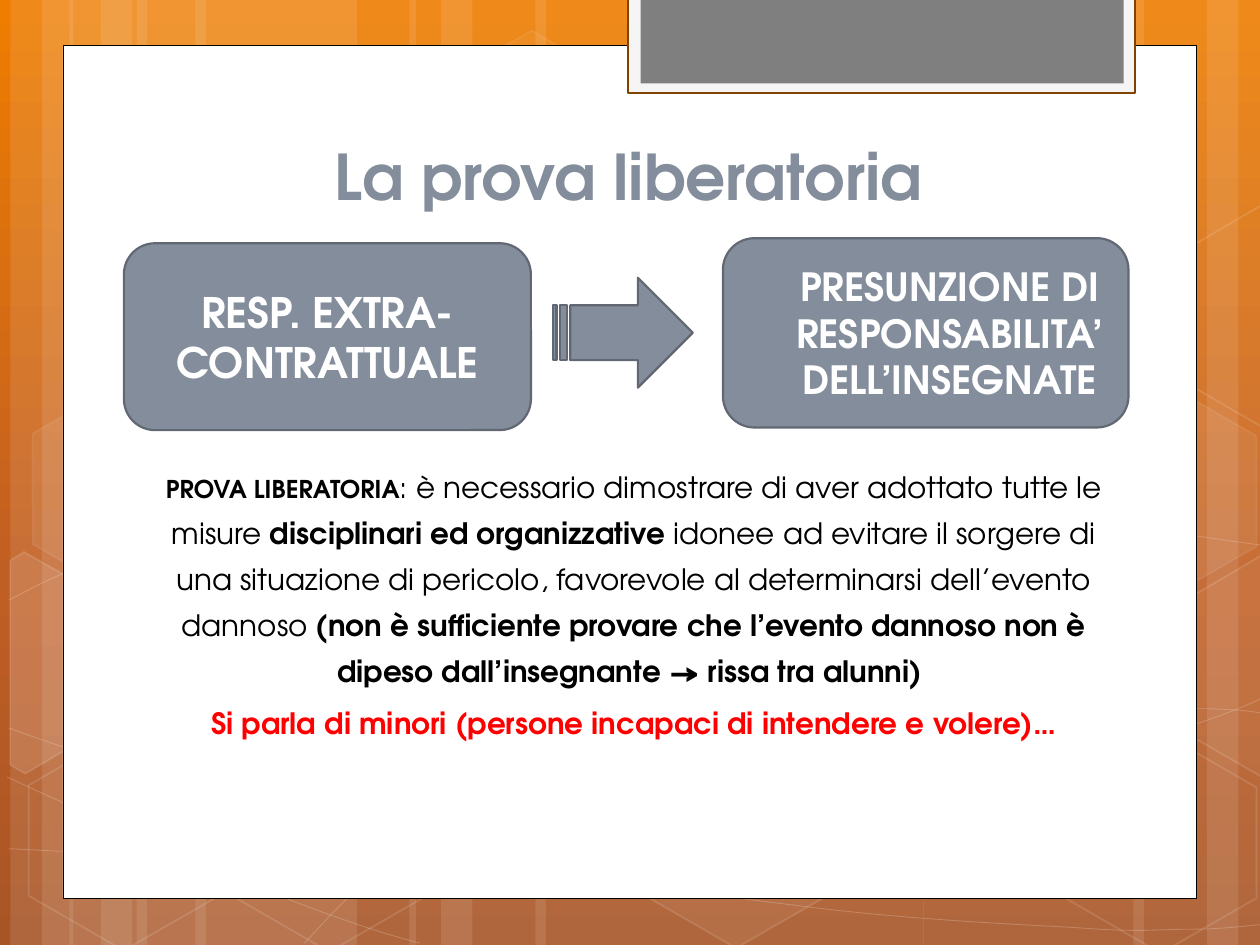
from copy import deepcopy

from lxml.etree import SubElement
from pptx import Presentation
from pptx.dml.color import RGBColor
from pptx.enum.shapes import MSO_SHAPE
from pptx.enum.text import MSO_ANCHOR, PP_ALIGN
from pptx.oxml.ns import qn
from pptx.util import Pt

WHITE = RGBColor(0xFF, 0xFF, 0xFF)
BLACK = RGBColor(0, 0, 0)
RED = RGBColor(0xFF, 0, 0)
SLATE = RGBColor(0x83, 0x8D, 0x9B)
SLATE_EDGE = RGBColor(0x61, 0x68, 0x73)
TAB_FRAME = RGBColor(0xF5, 0xF5, 0xF5)
TAB_EDGE = RGBColor(0x80, 0x43, 0)
TAB_GREY = RGBColor(0x7F, 0x7F, 0x7F)
BACKGROUND_STOPS = [
    (0, RGBColor(0xEE, 0x7D, 0)),
    (0.62, RGBColor(0xC0, 0x5E, 0x23)),
    (1, RGBColor(0xA8, 0x55, 0x26)),
]
FONT = "TeX Gyre Adventor"
SLIDE_BOX = (0, 0, 720, 540)

STRIPE_GROUPS = [(6, 1, 126), (39.6, 1, 126), (725.6, -1, 126), (234, 1, 222)]
CURVES = [
    ("CCCC", [
        (5, 485), (44, 487), (83, 489), (137, 488), (191, 487), (258, 486), (330, 479),
        (402, 472), (504, 458), (570, 444), (636, 431), (703, 409), (725, 397)]),
    ("CCCC", [
        (5, 343), (26, 332), (47, 321), (87, 310), (128, 300), (186, 284), (250, 279),
        (314, 273), (392, 273), (471, 279), (550, 284), (682, 307), (725, 312)]),
    ("C", [(4, 444), (91, 484), (178, 523), (240, 539)]),
    ("CCCCCC", [
        (5, 416), (27, 424), (50, 432), (92, 444), (134, 454), (197, 472), (257, 485),
        (317, 497), (392, 510), (452, 517), (512, 525), (576, 528), (614, 530),
        (652, 533), (662, 531), (680, 531), (699, 531), (712, 529), (725, 528)]),
    ("CCCCCCCLCC", [
        (174, 539), (187, 525), (200, 510), (217, 498), (235, 485), (259, 470), (279, 460),
        (300, 450), (312, 446), (338, 438), (364, 431), (413, 421), (438, 416),
        (464, 411), (467, 411), (490, 410), (512, 408), (547, 405), (572, 405),
        (597, 404), (638, 405), (638, 405), (686, 405),
        (699, 405), (711, 406), (718, 407), (724, 408), (722, 407), (724, 408)]),
]
HEXAGONS = [
    (240.5, 25.9, 4, 8), (357.8, 424.1, 6, 12), (7.9, 425.5, None, 12),
    (10.1, 224.6, 7, 8), (125.3, 426.2, None, 12),
    (600.5, 427, None, 12), (600.5, 226.1, 7, 8),
]
CUT_HEXAGONS = [
    ([(5.8, 320.4), (13.7, 315.4), (69.1, 347), (68.4, 410.4), (14.4, 442.1), (5.8, 437)], 10),
    ([(666.7, 349.2), (720.7, 317.5), (726.5, 321.1), (726.5, 441.4), (721.4, 444.2),
      (666.7, 412.6)], 4),
    ([(666.7, 149), (720.7, 117.4), (727.2, 121), (726.5, 241.2), (721.4, 244.1),
      (666.7, 212.4)], None),
]


def set_values(target, values):
    for name, value in values.items():
        setattr(target, name, value)


def set_alpha(fill_parent, percent):
    color = fill_parent.find(qn("a:solidFill"))[0]
    SubElement(color, qn("a:alpha")).set("val", str(percent * 1000))


def paint(shape, fill=None, line=None, width=1, fill_alpha=None, line_alpha=None):
    shape.shadow.inherit = False
    for target, color in ((shape.fill, fill), (shape.line.fill, line)):
        if color is None:
            target.background()
        else:
            target.solid()
            target.fore_color.rgb = color
    if line is not None:
        shape.line.width = Pt(width)
    properties = shape._element.spPr
    if fill_alpha:
        set_alpha(properties, fill_alpha)
    if line_alpha:
        set_alpha(properties.find(qn("a:ln")), line_alpha)


def add_preset(slide, kind, box, **style):
    shape = slide.shapes.add_shape(kind, *map(Pt, box))
    paint(shape, **style)
    return shape


def add_outline(slide, box, points, close, **style):
    placed = [(Pt(box[0] + x), Pt(box[1] + y)) for x, y in points]
    builder = slide.shapes.build_freeform(*placed[0])
    builder.add_line_segments(placed[1:], close=close)
    shape = builder.convert_to_shape()
    paint(shape, **style)
    return shape


def bend(shape, commands):
    steps = iter(list(shape._element.iter(qn("a:lnTo"))))
    for command in commands:
        step = next(steps)
        if command == "C":
            step.tag = qn("a:cubicBezTo")
            for extra in (next(steps), next(steps)):
                step.append(extra[0])
                extra.getparent().remove(extra)


def write_paragraph(paragraph, runs, **values):
    set_values(paragraph, {"alignment": PP_ALIGN.CENTER, **values})
    for text, size, bold, color in runs:
        run = paragraph.add_run()
        run.text = text
        set_values(run.font, {"name": FONT, "size": Pt(size), "bold": bold})
        run.font.color.rgb = color


def add_background(slide):
    fill = slide.background.fill
    fill.gradient()
    fill.gradient_angle = 270
    first = next(slide.element.iter(qn("a:gs")))
    first.addnext(deepcopy(first))
    for stop, (position, color) in zip(fill.gradient_stops, BACKGROUND_STOPS):
        stop.position = position
        stop.color.rgb = color


def add_decoration(slide, box):
    left, top, _, height = box
    for origin, direction, broad in STRIPE_GROUPS:
        for offset, width in ((72, broad), (0, 36), (18, 60)):
            x = origin + offset if direction > 0 else origin - offset - width
            add_preset(slide, MSO_SHAPE.RECTANGLE, (left + x, top, width, height),
                       fill=WHITE, fill_alpha=10)
    for commands, nodes in CURVES:
        curve = add_outline(slide, box, nodes, False, line=WHITE, width=0.5, line_alpha=20)
        bend(curve, commands)
    for x, y, fill_alpha, line_alpha in HEXAGONS:
        hexagon = add_preset(slide, MSO_SHAPE.HEXAGON, (left + x, top + y, 126, 109.4),
                             fill=WHITE if fill_alpha else None, line=WHITE,
                             fill_alpha=fill_alpha, line_alpha=line_alpha)
        hexagon.adjustments[0] = 0.29
        hexagon.rotation = 30
    for points, fill_alpha in CUT_HEXAGONS:
        add_outline(slide, box, points, True, fill=WHITE if fill_alpha else None,
                    line=WHITE, fill_alpha=fill_alpha, line_alpha=12)


def add_panel(slide, box):
    left, top, _, _ = box
    add_preset(slide, MSO_SHAPE.RECTANGLE, box, fill=WHITE, line=BLACK, width=0.5)
    add_preset(slide, MSO_SHAPE.RECTANGLE, (left + 323, top - 27.4, 289.6, 54.7),
               fill=TAB_FRAME, line=TAB_EDGE, width=1.25)
    add_preset(slide, MSO_SHAPE.RECTANGLE, (left + 330.1, top - 27.4, 276, 49),
               fill=TAB_GREY)


def add_text(slide, box, paragraphs, anchor=MSO_ANCHOR.TOP, **values):
    frame = slide.shapes.add_textbox(*map(Pt, box)).text_frame
    set_values(frame, {"word_wrap": True, "vertical_anchor": anchor})
    for index, runs in enumerate(paragraphs):
        paragraph = frame.add_paragraph() if index else frame.paragraphs[0]
        write_paragraph(paragraph, runs, **values)


def add_flow(slide, box):
    left, top, _, _ = box
    style = {"fill": SLATE, "line": SLATE_EDGE, "width": 1.25}
    cards = [
        ((342.3, 0, 231.8, 108.2), "PRESUNZIONE DI RESPONSABILITA’ DELL’INSEGNATE", 22.2, 27.4),
        ((0, 2.9, 232.6, 106.8), "RESP. EXTRA-CONTRATTUALE", 24, 0),
    ]
    for (x, y, width, height), text, size, indent in cards:
        card = add_preset(slide, MSO_SHAPE.ROUNDED_RECTANGLE,
                          (left + x, top + y, width, height), **style)
        set_values(card.text_frame, {"word_wrap": True, "vertical_anchor": MSO_ANCHOR.MIDDLE})
        paragraph = card.text_frame.paragraphs[0]
        write_paragraph(paragraph, [(text, size, True, WHITE)])
        paragraph._p.get_or_add_pPr().set("marL", str(Pt(indent)))
    add_preset(slide, MSO_SHAPE.STRIPED_RIGHT_ARROW,
               (left + 245.2, top + 22.6, 79.9, 62.8), **style)


def main():
    presentation = Presentation()
    set_values(presentation, {"slide_width": Pt(720), "slide_height": Pt(540)})
    slide = presentation.slides.add_slide(presentation.slide_layouts[6])
    add_background(slide)
    add_decoration(slide, SLIDE_BOX)
    add_panel(slide, (36, 26, 648, 487.2))
    add_text(slide, (82.5, 65.8, 553, 59.8),
             [[("La prova liberatoria", 36, True, SLATE)]], MSO_ANCHOR.BOTTOM)
    add_flow(slide, (70.8, 136.1, 574.1, 109.7))
    add_text(slide, (78.8, 258.6, 566.6, 198.7), [
        [("PROVA LIBERATORIA", 14, True, BLACK),
         (": è necessario dimostrare di aver adottato tutte le misure ", 16.8, False, BLACK),
         ("disciplinari ed organizzative ", 16.8, True, BLACK),
         ("idonee ad evitare il sorgere di una situazione di pericolo, favorevole al "
          "determinarsi dell’evento dannoso ", 16.8, False, BLACK),
         ("(non è sufficiente provare che l’evento dannoso non è dipeso dall’insegnante "
          "→ rissa tra alunni) ", 16.8, True, BLACK)],
        [("Si parla di minori (persone incapaci di intendere e volere)…", 16.8, True, RED)],
    ], line_spacing=1.3, space_before=Pt(3.4))
    presentation.save("out.pptx")


if __name__ == "__main__":
    main()
